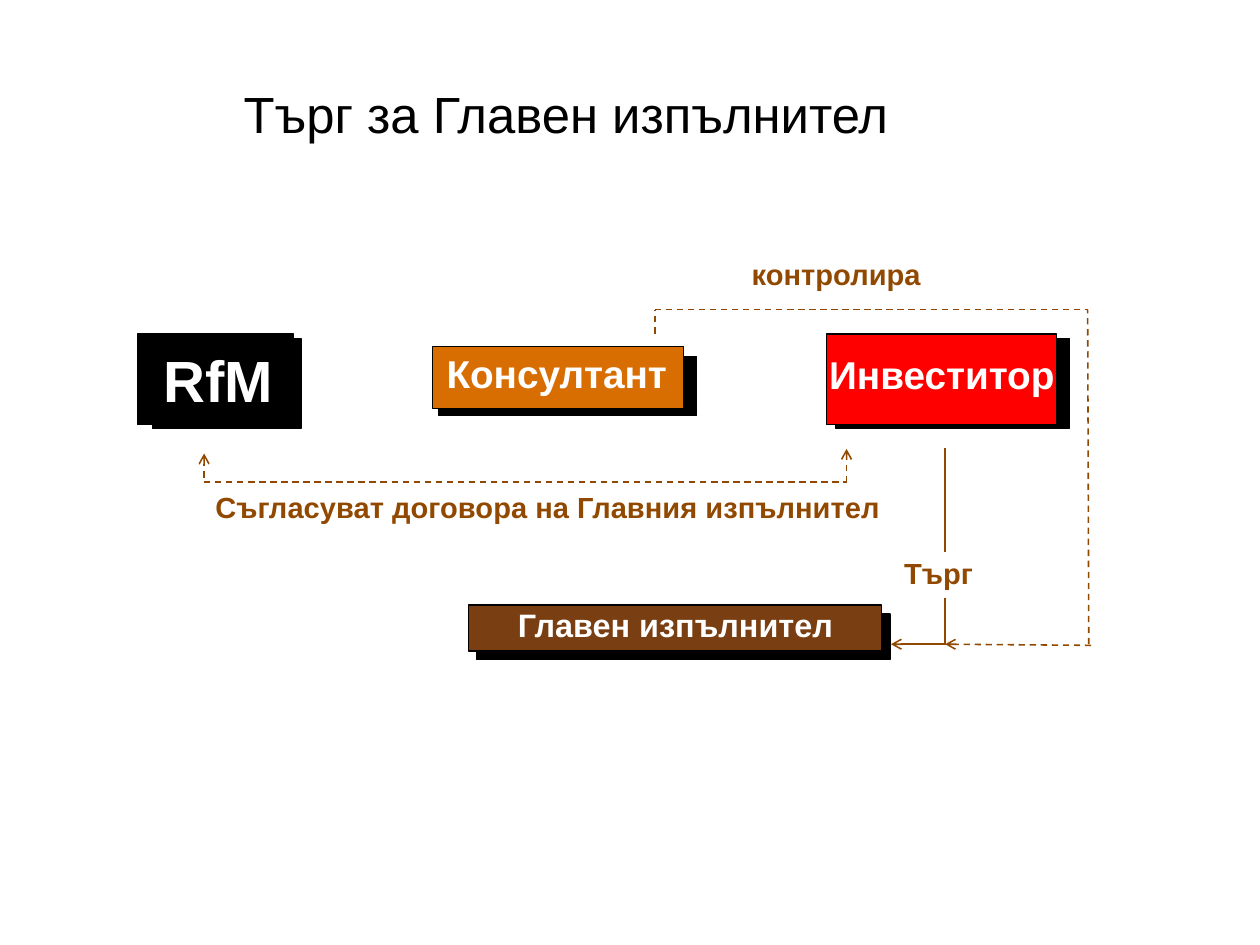
from dataclasses import dataclass

from lxml import etree
from pptx import Presentation
from pptx.dml.color import RGBColor
from pptx.enum import dml, shapes, text
from pptx.oxml import ns
from pptx.util import Pt


@dataclass(frozen=True)
class Theme:
    font: str = "Arial"
    black: str = "000000"
    white: str = "FFFFFF"
    accent: str = "914901"
    consultant: str = "D86D02"
    investor: str = "FF0000"
    contractor: str = "793E11"
    title_size: float = 32
    bank_size: float = 36.6
    actor_size: float = 24.4
    contractor_size: float = 20.4
    note_size: float = 18.3
    outline: float = 0
    flow: float = 1


THEME = Theme()


def points(*lengths):
    return [Pt(length) for length in lengths]


def style(paragraph, size, color, bold=True):
    font = paragraph.font
    font.name, font.size, font.bold = THEME.font, Pt(size), bold
    font.color.rgb = RGBColor.from_string(color)


def clear_margins(frame):
    frame.margin_left = frame.margin_right = 0
    frame.margin_top = frame.margin_bottom = 0


def add_title(slide, box, wording):
    title = slide.shapes.title
    title.left, title.top, title.width, title.height = points(*box)
    frame = title.text_frame
    frame.text = wording
    clear_margins(frame)
    frame.auto_size = text.MSO_AUTO_SIZE.NONE
    frame.vertical_anchor = text.MSO_ANCHOR.MIDDLE
    paragraph = frame.paragraphs[0]
    paragraph.alignment = text.PP_ALIGN.CENTER
    paragraph.line_spacing = 0.93
    style(paragraph, THEME.title_size, THEME.black, bold=False)


def add_panel(slide, box, color):
    panel = slide.shapes.add_shape(shapes.MSO_SHAPE.RECTANGLE, *points(*box))
    panel.shadow.inherit = False
    panel.fill.solid()
    panel.fill.fore_color.rgb = RGBColor.from_string(color)
    panel.line.color.rgb = RGBColor.from_string(THEME.black)
    panel.line.width = Pt(THEME.outline)


def add_label(slide, box, wording, size, color, wrap=True):
    label = slide.shapes.add_textbox(*points(*box))
    frame = label.text_frame
    frame.text = wording
    frame.word_wrap = wrap
    style(frame.paragraphs[0], size, color)
    return frame


def add_actor(slide, box, color, shade, name, name_box, size):
    """Draw a named panel; shade and name_box are offsets from its corner plus a size."""
    left, top = box[:2]
    for (dx, dy, width, height), fill in ((shade, THEME.black), ((0, 0, *box[2:]), color)):
        add_panel(slide, (left + dx, top + dy, width, height), fill)
    dx, dy, width, height = name_box
    frame = add_label(slide, (left + dx, top + dy, width, height),
                      name, size, THEME.white, wrap=False)
    clear_margins(frame)


def add_note(slide, box, wording, align=text.PP_ALIGN.LEFT):
    frame = add_label(slide, box, wording, THEME.note_size, THEME.accent)
    frame.paragraphs[0].alignment = align


def add_flow(slide, start, end, dashed=True, arrow=False):
    flow = slide.shapes.add_connector(shapes.MSO_CONNECTOR.STRAIGHT, *points(*start, *end))
    flow.line.color.rgb = RGBColor.from_string(THEME.accent)
    flow.line.width = Pt(THEME.flow)
    if dashed:
        flow.line.dash_style = dml.MSO_LINE.DASH
    if arrow:
        etree.SubElement(flow.line._get_or_add_ln(), ns.qn("a:tailEnd"), type="arrow")
    etree.SubElement(flow._element.spPr, ns.qn("a:effectLst"))


def add_actors(slide):
    add_actor(slide, (86.4, 210.4, 98.6, 57.2), THEME.black, (9.4, 2.7, 93.8, 56.7),
              "RfM", (16.4, 6.3, 75.6, 45.4), THEME.bank_size)
    add_actor(slide, (272.7, 218.2, 158, 39.4), THEME.consultant, (3.6, 6.5, 162.5, 37.2),
              "Консултант", (8.6, 2.2, 144, 29.5), THEME.actor_size)
    add_actor(slide, (520.4, 210.4, 145.4, 57.2), THEME.investor, (5.8, 2.7, 147.4, 56.7),
              "Инвеститор", (1.9, 10.6, 145.4, 54), THEME.actor_size)
    add_actor(slide, (295, 381.1, 260.4, 29), THEME.contractor, (5.4, 5.6, 260.4, 29),
              "Главен изпълнител", (31.2, -0.2, 202.3, 24.5), THEME.contractor_size)


def add_control(slide, left, top, right, bottom, junction):
    """Route the consultant's supervision around the investor to the tender line."""
    add_flow(slide, (left, top + 15.1), (left, top))
    add_flow(slide, (left, top), (right, top))
    add_flow(slide, (right + 0.7, bottom), (right, top))
    add_flow(slide, (right + 2.2, bottom + 0.7), (junction, bottom), arrow=True)
    add_note(slide, (left + 53.8, top - 36.9, 164.9, 30.2), "контролира")


def add_tender(slide, axis, top, bottom, target):
    add_flow(slide, (axis, top + 65.5), (axis, top), dashed=False)
    add_flow(slide, (axis, bottom + 0.7), (axis, bottom - 28.8), dashed=False)
    add_flow(slide, (axis, bottom), (target, bottom), dashed=False, arrow=True)
    add_note(slide, (axis - 86.6, top + 64.1, 164.9, 30.2), "Търг", text.PP_ALIGN.CENTER)


def add_agreement(slide, left, right, base):
    add_flow(slide, (left, base), (right, base))
    add_flow(slide, (right, base), (right, base - 20.9), arrow=True)
    add_flow(slide, (left, base - 2.9), (left, base - 18), arrow=True)
    add_note(slide, (left, base + 1.2, 444.2, 29.5),
             "Съгласуват договора на Главния изпълнител")


def main():
    deck = Presentation()
    deck.slide_width, deck.slide_height = points(793.75, 595.25)
    slide = deck.slides.add_slide(deck.slide_layouts[5])
    add_title(slide, (0, 23.8, 713.5, 98.6), "Търг за Главен изпълнител")
    add_actors(slide)
    axis, arrival = 595.4, 405.8
    add_tender(slide, axis, 282.2, arrival, 561.3)
    add_control(slide, 412.6, 195, 685.2, arrival, axis)
    add_agreement(slide, 128.6, 533.3, 303.7)
    deck.save("out.pptx")


if __name__ == "__main__":
    main()
